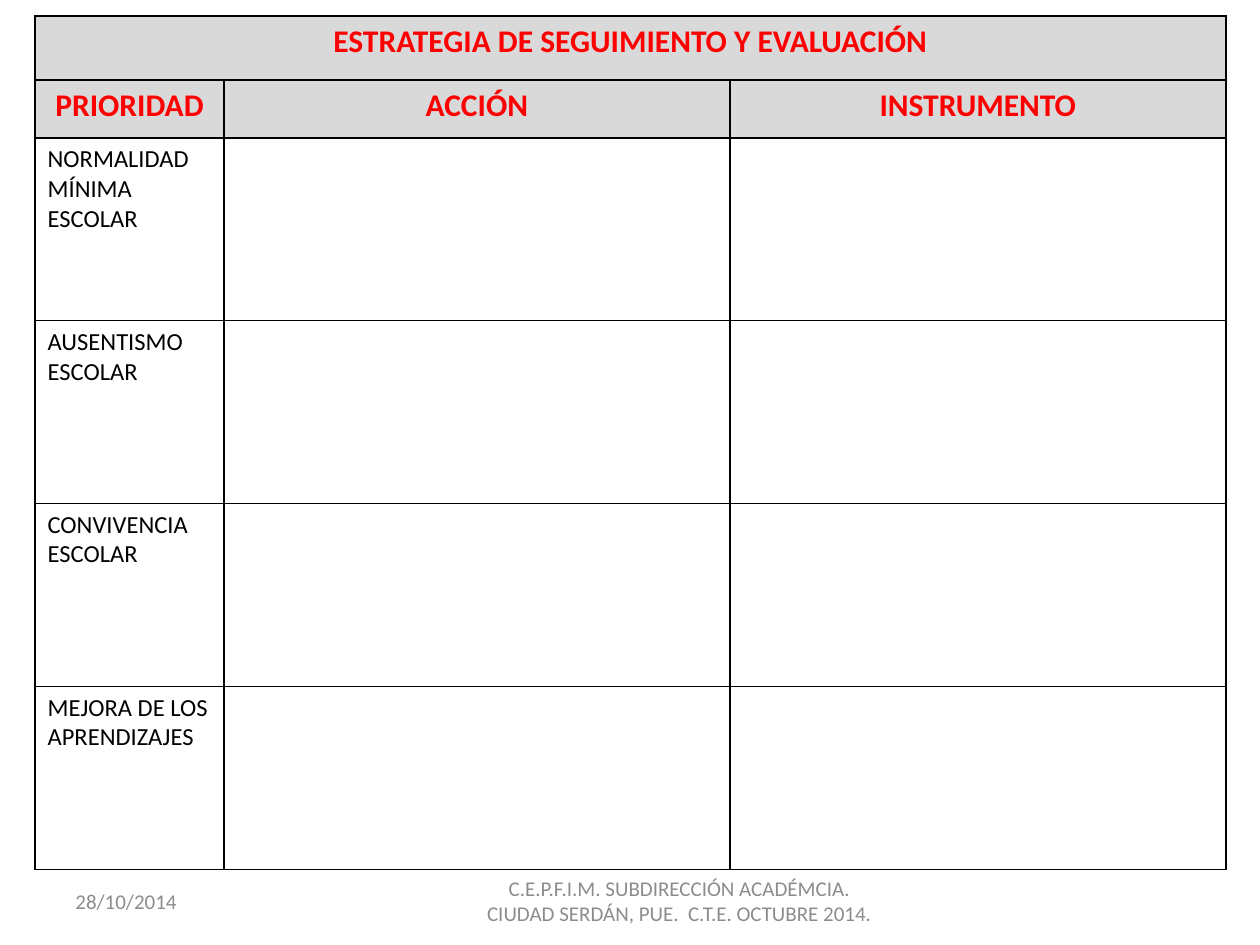
from lxml.etree import SubElement
from pptx import Presentation
from pptx.dml.color import RGBColor
from pptx.enum.text import MSO_ANCHOR, PP_ALIGN
from pptx.oxml.ns import qn
from pptx.util import Pt

BLACK = RGBColor(0x00, 0x00, 0x00)
RED = RGBColor(0xFF, 0x00, 0x00)
LIGHT_GRAY = RGBColor(0xD9, 0xD9, 0xD9)
FOOTER_GRAY = RGBColor(0x8C, 0x8C, 0x8C)

FONT = "Calibri"
COLUMN_WIDTHS = [108, 289, 283.5]
HEADER_HEIGHTS = [36.7, 33.1]
PRIORITY_HEIGHT = 104.5
TITLE = "ESTRATEGIA DE SEGUIMIENTO Y EVALUACIÓN"
HEADINGS = ["PRIORIDAD", "ACCIÓN", "INSTRUMENTO"]
PRIORITIES = [
    "NORMALIDAD MÍNIMA\nESCOLAR",
    "AUSENTISMO ESCOLAR",
    "CONVIVENCIA ESCOLAR",
    "MEJORA DE LOS APRENDIZAJES",
]
FOOTER = "C.E.P.F.I.M. SUBDIRECCIÓN ACADÉMCIA.\nCIUDAD SERDÁN, PUE.  C.T.E. OCTUBRE 2014."


def write_text(text_frame, text, size, color, bold=False, alignment=PP_ALIGN.LEFT):
    text_frame.text = text
    for paragraph in text_frame.paragraphs:
        paragraph.alignment = alignment
        for run in paragraph.runs:
            run.font.name = FONT
            run.font.size = Pt(size)
            run.font.bold = bold
            run.font.color.rgb = color


def add_footer_text(slide, left, width, text, alignment):
    text_box = slide.shapes.add_textbox(Pt(left), Pt(500.5), Pt(width), Pt(28.75))
    text_frame = text_box.text_frame
    text_frame.word_wrap = True
    text_frame.vertical_anchor = MSO_ANCHOR.MIDDLE
    write_text(text_frame, text, 12, FOOTER_GRAY, alignment=alignment)


def set_borders(cell):
    properties = cell._tc.get_or_add_tcPr()
    for side in ("a:lnL", "a:lnR", "a:lnT", "a:lnB"):
        line = SubElement(properties, qn(side), w=str(Pt(1)))
        fill = SubElement(line, qn("a:solidFill"))
        SubElement(fill, qn("a:srgbClr"), val=str(BLACK))


def write_heading(cell, text):
    write_text(cell.text_frame, text, 18, RED, True, PP_ALIGN.CENTER)


def add_strategy_table(slide):
    heights = HEADER_HEIGHTS + [PRIORITY_HEIGHT] * len(PRIORITIES)
    frame = slide.shapes.add_table(
        len(heights), len(COLUMN_WIDTHS), Pt(20), Pt(9),
        Pt(sum(COLUMN_WIDTHS)), Pt(sum(heights)),
    )
    table = frame.table
    table.first_row = False
    table.horz_banding = False
    for column, width in zip(table.columns, COLUMN_WIDTHS):
        column.width = Pt(width)
    for index, (row, height) in enumerate(zip(table.rows, heights)):
        row.height = Pt(height)
        for cell in row.cells:
            set_borders(cell)
            if index < len(HEADER_HEIGHTS):
                cell.fill.solid()
                cell.fill.fore_color.rgb = LIGHT_GRAY
            else:
                cell.fill.background()

    table.cell(0, 0).merge(table.cell(0, len(COLUMN_WIDTHS) - 1))
    write_heading(table.cell(0, 0), TITLE)
    for column_index, heading in enumerate(HEADINGS):
        write_heading(table.cell(1, column_index), heading)
    for row_index, priority in enumerate(PRIORITIES, len(HEADER_HEIGHTS)):
        write_text(table.cell(row_index, 0).text_frame, priority, 14, BLACK)


def main():
    presentation = Presentation()
    presentation.slide_width = Pt(720)
    presentation.slide_height = Pt(540)
    slide = presentation.slides.add_slide(presentation.slide_layouts[6])
    add_footer_text(slide, 36, 168, "28/10/2014", PP_ALIGN.LEFT)
    add_footer_text(slide, 246, 284.5, FOOTER, PP_ALIGN.CENTER)
    add_strategy_table(slide)
    presentation.save("out.pptx")


if __name__ == "__main__":
    main()
